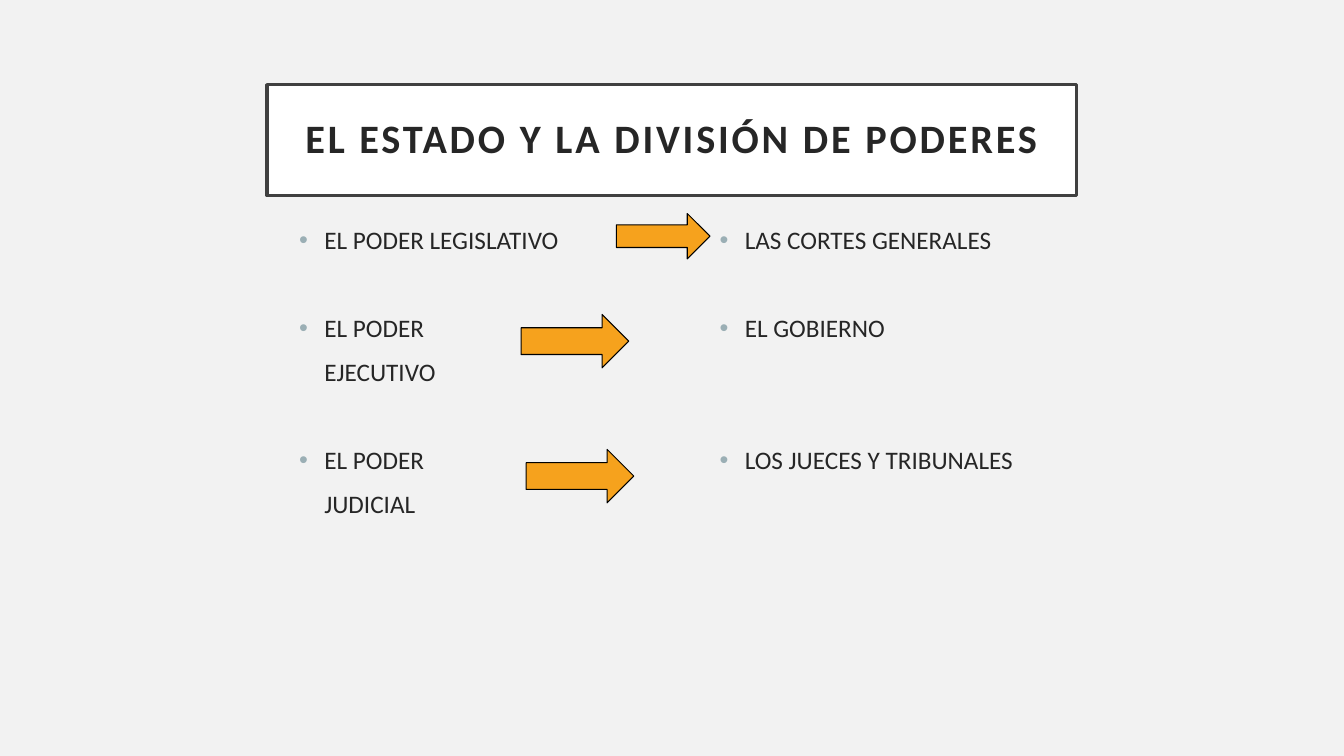
from lxml.etree import SubElement as Sub
from pptx import Presentation
from pptx.dml.color import RGBColor as Rgb
from pptx.enum.shapes import MSO_SHAPE as Shape
from pptx.enum.text import MSO_ANCHOR as Anchor, PP_ALIGN as Align
from pptx.oxml.ns import qn
from pptx.util import Pt

HEX = {"back": "F2F2F2", "panel": "FFFFFF", "frame": "404040", "text": "262626",
       "dot": "9BAFB5", "arrow": "F6A21D", "edge": "000000"}
COLOR = {name: Rgb.from_string(code) for name, code in HEX.items()}
GAP = 9.6    # space between paragraphs
PITCH = 31.6  # one text line plus its gap


def block(kind, box, fill, line, width):
    shape = slide.shapes.add_shape(kind, *map(Pt, box))
    shape.shadow.inherit = False
    shape.fill.solid()
    shape.fill.fore_color.rgb = COLOR[fill]
    shape.line.color.rgb = COLOR[line]
    shape.line.width = Pt(width)
    return shape


def style(para, size):
    font = para.font
    font.name, font.size = "Calibri", Pt(size)
    font.color.rgb = COLOR["text"]
    return font


deck = Presentation()
deck.slide_width, deck.slide_height = Pt(960), Pt(540)
slide = deck.slides.add_slide(deck.slide_layouts[6])
slide.background.fill.solid()
slide.background.fill.fore_color.rgb = COLOR["back"]

# Title
title = block(Shape.RECTANGLE, (190.8, 60.5, 578.2, 79.2), "panel", "frame", 2.5)
frame = title.text_frame
frame.word_wrap = True
frame.vertical_anchor = Anchor.MIDDLE
frame.margin_left = frame.margin_right = Pt(14.4)
frame.margin_top = frame.margin_bottom = Pt(14.4)
para = frame.paragraphs[0]
para.text = "EL ESTADO Y LA DIVISIÓN DE PODERES"
para.alignment = Align.CENTER
para.line_spacing = 0.9
style(para, 28.8).bold = True
para.runs[0].font._element.set("spc", "200")

# Columns: each entry is text, lines skipped above it, bullet or not
powers = [("EL PODER LEGISLATIVO", 0, True),
          ("EL PODER", 1, True), ("EJECUTIVO", 0, False),
          ("EL PODER", 1, True), ("JUDICIAL", 0, False)]
bodies = [("LAS CORTES GENERALES", 0, True), ("EL GOBIERNO", 1, True),
          ("LOS JUECES Y TRIBUNALES", 2, True)]
for left, width, items in [(206.6, 259.2, powers), (506.9, 267.8, bodies)]:
    frame = slide.shapes.add_textbox(Pt(left), Pt(157), Pt(width), Pt(357)).text_frame
    frame.word_wrap = True
    for row, (text, skip, dot) in enumerate(items):
        para = frame.add_paragraph() if row else frame.paragraphs[0]
        para.text = text
        props = para._p.get_or_add_pPr()
        props.set("marL", str(Pt(18)))
        props.set("indent", str(Pt(-18) if dot else 0))
        if dot:
            tint = Sub(props, qn("a:buClr"))
            Sub(tint, qn("a:srgbClr"), val=HEX["dot"])
            Sub(props, qn("a:buFont"), typeface="Arial")
            Sub(props, qn("a:buChar"), char="•")
        para.space_before = Pt(GAP + skip * PITCH if row else 0)
        style(para, 18)

# Arrows from each power to its body
for box in [(440.3, 152.5, 66.8, 32.4), (372.2, 224.6, 77, 38.2),
            (375.8, 321, 77, 38.2)]:
    block(Shape.RIGHT_ARROW, box, "arrow", "edge", 0.75)

deck.save("out.pptx")
